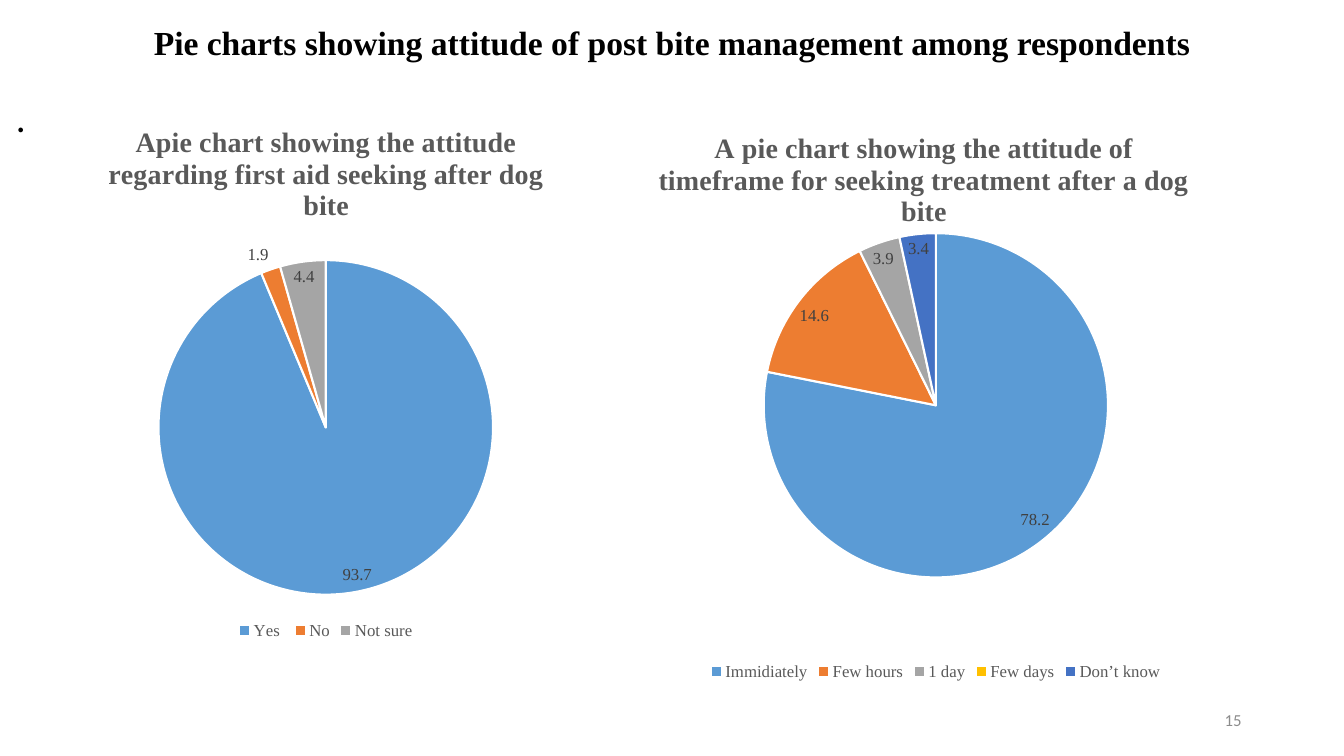
from lxml import etree
from pptx import Presentation
from pptx.chart.data import CategoryChartData
from pptx.dml.color import RGBColor
from pptx.enum.chart import XL_CHART_TYPE as ChartType
from pptx.enum.chart import XL_LABEL_POSITION as LabelPosition
from pptx.enum.chart import XL_LEGEND_POSITION as LegendPosition
from pptx.enum.text import MSO_ANCHOR as Anchor
from pptx.enum.text import PP_ALIGN as Align
from pptx.oxml.ns import qn
from pptx.util import Pt

COLORS = {
    "black": "000000", "white": "FFFFFF", "title": "595959",
    "label": "404040", "page": "8C8C8C",
}
SLICES = ["5B9BD5", "ED7D31", "A5A5A5", "FFC000", "4472C4"]
SERIF, SANS = "Times New Roman", "Calibri"


def style(font, size, color, name=SERIF, bold=False):
    font.size, font.name, font.bold = Pt(size), name, bold
    font.color.rgb = RGBColor.from_string(COLORS[color])


def add_line(slide, box, text, size, color, name, align, anchor, bold=False):
    frame = slide.shapes.add_textbox(*map(Pt, box)).text_frame
    frame.word_wrap = True
    frame.vertical_anchor = anchor
    line = frame.paragraphs[0]
    line.text, line.alignment, line.line_spacing = text, align, 0.9
    style(line.font, size, color, name, bold)
    return line


def set_layout(parent, before, **fractions):
    for old in parent.findall(qn("c:layout")):
        parent.remove(old)
    layout = etree.Element(qn("c:layout"))
    manual = etree.SubElement(layout, qn("c:manualLayout"))
    if "w" in fractions:
        etree.SubElement(manual, qn("c:layoutTarget")).set("val", "inner")
    for axis in "xy":
        etree.SubElement(manual, qn(f"c:{axis}Mode")).set("val", "edge")
    for key, value in fractions.items():
        etree.SubElement(manual, qn(f"c:{key}")).set("val", str(value))
    parent.insert(before, layout)


def add_pie(slide, box, title, answers, plot, title_spot=None):
    data = CategoryChartData()
    data.categories = list(answers)
    data.add_series("Series 1", list(answers.values()))
    chart = slide.shapes.add_chart(ChartType.PIE, *map(Pt, box), data).chart
    style(chart.font, 10, "black", SANS)

    chart.has_title = True
    heading = chart.chart_title.text_frame.paragraphs[0]
    heading.text = title
    style(heading.font, 20, "title", bold=True)
    chart.chart_title.include_in_layout = False
    if title_spot:
        set_layout(heading._p.getparent().getparent().getparent(), 1,
                   x=title_spot[0], y=title_spot[1])

    chart.has_legend = True
    chart.legend.position = LegendPosition.BOTTOM
    chart.legend.include_in_layout = False
    style(chart.legend.font, 12, "title")

    pie = chart.plots[0]
    pie.vary_by_categories = True
    pie.has_data_labels = True
    labels = pie.data_labels
    labels.show_value = True
    labels.number_format, labels.number_format_is_linked = "0.0;;", False
    labels.position = LabelPosition.BEST_FIT
    style(labels.font, 12, "label")
    for index, color in enumerate(SLICES[:len(answers)]):
        part = pie.series[0].points[index].format
        part.fill.solid()
        part.fill.fore_color.rgb = RGBColor.from_string(color)
        part.line.color.rgb = RGBColor.from_string(COLORS["white"])
        part.line.width = Pt(1.5)

    area = chart._chartSpace.chart.plotArea
    set_layout(area, 0, **dict(zip("xywh", plot)))


def build_slide(slide):
    add_line(slide, (66, 6.5, 828, 51),
             "Pie charts showing attitude of post bite management among respondents",
             24, "black", SERIF, Align.CENTER, Anchor.MIDDLE, bold=True)
    dot = add_line(slide, (4.3, 67, 950, 466.5), ".", 28, "black", SANS,
                   Align.LEFT, Anchor.TOP)
    dot.space_before = Pt(10)
    add_pie(slide, (13.7, 73.4, 438.5, 386.6),
            "Apie chart showing the attitude regarding first aid seeking after dog bite",
            {"Yes ": 93.7, "No": 1.9, "Not sure": 4.4},
            (0.227, 0.29, 0.545, 0.62))
    add_pie(slide, (422.6, 79.2, 491.8, 409.7),
            "A pie chart showing the attitude of timeframe for seeking treatment after a dog bite",
            {"Immidiately": 78.2, "Few hours": 14.6, "1 day": 3.9,
             "Few days": 0, "Don’t know": 3.4},
            (0.25, 0.213, 0.5, 0.601), title_spot=(0.09, 0.025))
    add_line(slide, (678, 500.5, 216, 28.8), "15", 12, "page", SANS,
             Align.RIGHT, Anchor.MIDDLE)


def main():
    deck = Presentation()
    deck.slide_width, deck.slide_height = Pt(960), Pt(540)
    build_slide(deck.slides.add_slide(deck.slide_layouts[6]))
    deck.save("out.pptx")


if __name__ == "__main__":
    main()
